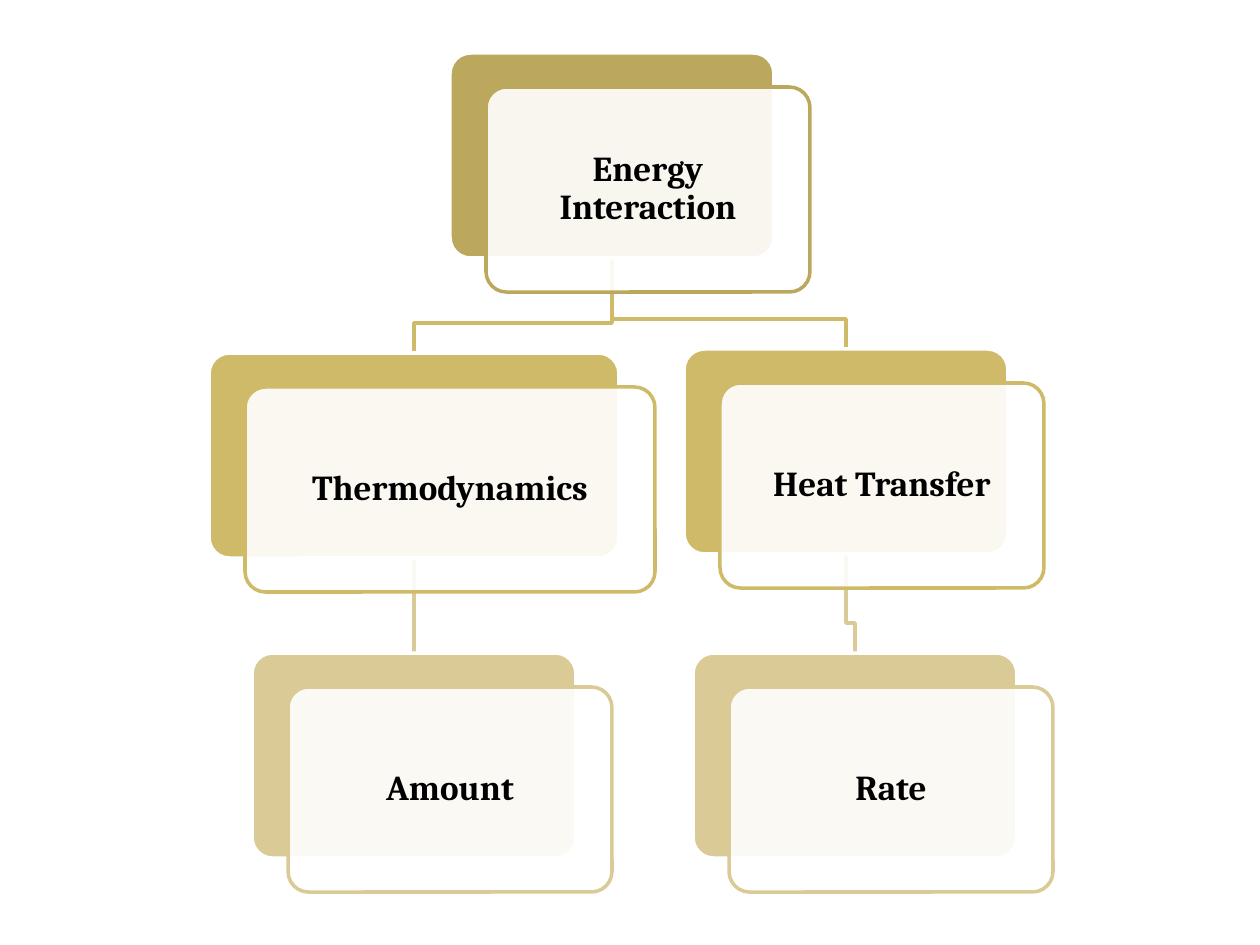
from pptx import Presentation
from pptx import util as u
from pptx.dml.color import RGBColor
from pptx.enum import shapes, text
from pptx.oxml.ns import qn
from lxml import etree

SCALE = u.Inches(1) / 126
COLORS = {
    "top": "BBA85D",
    "middle": "CFBA69",
    "bottom": "D9CA96",
    "white": "FFFFFF",
    "text": "000000",
}
CARD_HEIGHT = 205
OFFSET_X, OFFSET_Y = 36, 34
BEND_ABOVE_CHILD = 30

cards = {
    "Energy Interaction": (450, 53, 324, "top"),
    "Thermodynamics": (209, 353, 410, "middle"),
    "Amount": (252, 653, 324, "bottom"),
    "Heat Transfer": (684, 349, 324, "middle"),
    "Rate": (693, 653, 324, "bottom"),
}
links = [
    ("Energy Interaction", "Thermodynamics"),
    ("Thermodynamics", "Amount"),
    ("Energy Interaction", "Heat Transfer"),
    ("Heat Transfer", "Rate"),
]


def px(value):
    return round(value * SCALE)


def add_card(left, top, width, fill, line):
    shape = slide.shapes.add_shape(
        shapes.MSO_SHAPE.ROUNDED_RECTANGLE, px(left), px(top), px(width), px(CARD_HEIGHT)
    )
    shape.adjustments[0] = 0.1
    shape.shadow.inherit = False
    shape.fill.solid()
    shape.fill.fore_color.rgb = RGBColor.from_string(COLORS[fill])
    shape.line.color.rgb = RGBColor.from_string(COLORS[line])
    shape.line.width = u.Pt(2)
    return shape


presentation = Presentation()
presentation.slide_width = px(1260)
presentation.slide_height = px(945)
slide = presentation.slides.add_slide(presentation.slide_layouts[6])

backs = {}
for label, (left, top, width, level) in cards.items():
    backs[label] = add_card(left, top, width, level, "white")
    front = add_card(left + OFFSET_X, top + OFFSET_Y, width, "white", level)
    color = front.element.spPr.find(qn("a:solidFill"))[0]
    etree.SubElement(color, qn("a:alpha"), val="90000")

    frame = front.text_frame
    frame.text = label
    frame.word_wrap = True
    frame.vertical_anchor = text.MSO_ANCHOR.MIDDLE
    frame.margin_left = frame.margin_right = px(10)
    frame.margin_top = frame.margin_bottom = px(10)
    paragraph = frame.paragraphs[0]
    paragraph.alignment = text.PP_ALIGN.CENTER
    paragraph.line_spacing = 0.9
    font = paragraph.runs[0].font
    font.name = "Cambria"
    font.size = u.Pt(20)
    font.bold = True
    font.color.rgb = RGBColor.from_string(COLORS["text"])

for parent, child in links:
    parent_left, parent_top, parent_width, _ = cards[parent]
    child_left, child_top, child_width, level = cards[child]
    start_x, start_y = parent_left + parent_width // 2, parent_top + CARD_HEIGHT
    end_x = child_left + child_width // 2
    if start_x == end_x:
        link = slide.shapes.add_connector(
            shapes.MSO_CONNECTOR.STRAIGHT, px(start_x), px(start_y), px(end_x), px(child_top)
        )
        link.begin_connect(backs[parent], 2)
        link.end_connect(backs[child], 0)
        etree.SubElement(link.element.spPr, qn("a:effectLst"))
    else:
        bend_y = child_top - BEND_ABOVE_CHILD
        builder = slide.shapes.build_freeform(start_x, start_y, scale=SCALE)
        builder.add_line_segments(
            [(start_x, bend_y), (end_x, bend_y), (end_x, child_top)], close=False
        )
        link = builder.convert_to_shape()
        link.fill.background()
        link.shadow.inherit = False
    link.line.color.rgb = RGBColor.from_string(COLORS[level])
    link.line.width = u.Pt(2)
    link.element.getparent().insert(2, link.element)

presentation.save("out.pptx")
